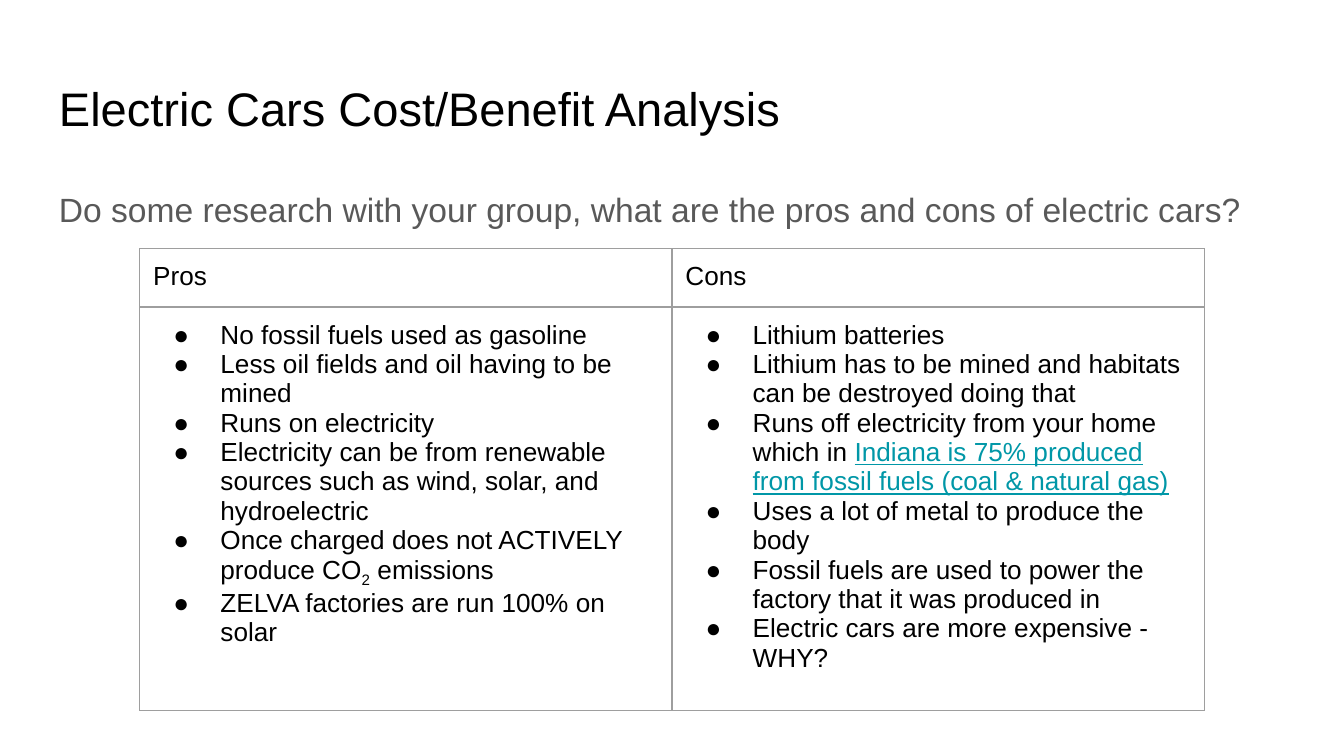
from dataclasses import dataclass

from lxml.etree import SubElement
from pptx import Presentation
from pptx.dml.color import RGBColor
from pptx.enum.text import MSO_ANCHOR
from pptx.oxml.ns import qn
from pptx.util import Inches, Pt

FONT = "Arial"
BLACK = "000000"
GRAY = "595959"
TEAL = "0097A7"
BORDER = "9E9E9E"
WHITE = "FFFFFF"
MARGIN = Inches(0.1)


@dataclass(frozen=True)
class TextRun:
    text: str
    size: float = 14
    color: str = BLACK
    underline: bool = False
    subscript: bool = False


HEADINGS = ["Pros", "Cons"]
PROS = [
    [TextRun("No fossil fuels used as gasoline")],
    [TextRun("Less oil fields and oil having to be mined")],
    [TextRun("Runs on electricity")],
    [TextRun("Electricity can be from renewable sources such as wind, solar, and hydroelectric")],
    [
        TextRun("Once charged does not ACTIVELY produce CO"),
        TextRun("2", subscript=True),
        TextRun(" emissions"),
    ],
    [TextRun("ZELVA factories are run 100% on solar")],
]
CONS = [
    [TextRun("Lithium batteries")],
    [TextRun("Lithium has to be mined and habitats can be destroyed doing that")],
    [
        TextRun("Runs off electricity from your home which in "),
        TextRun(
            "Indiana is 75% produced from fossil fuels (coal & natural gas)",
            color=TEAL,
            underline=True,
        ),
    ],
    [TextRun("Uses a lot of metal to produce the body")],
    [TextRun("Fossil fuels are used to power the factory that it was produced in")],
    [TextRun("Electric cars are more expensive - WHY?")],
]


def rgb(value: str) -> RGBColor:
    return RGBColor.from_string(value)


def add_runs(paragraph, text_runs: list[TextRun]) -> None:
    for text_run in text_runs:
        run = paragraph.add_run()
        run.text = text_run.text
        run.font.name = FONT
        run.font.size = Pt(text_run.size)
        run.font.color.rgb = rgb(text_run.color)
        if text_run.underline:
            run.font.underline = True
        if text_run.subscript:
            run._r.get_or_add_rPr().set("baseline", "-25000")


def set_bullet(paragraph) -> None:
    properties = paragraph._p.get_or_add_pPr()
    properties.set("marL", str(Inches(0.5)))
    properties.set("indent", str(Inches(-0.35)))
    color = SubElement(properties, qn("a:buClr"))
    SubElement(color, qn("a:srgbClr"), val=BLACK)
    SubElement(properties, qn("a:buFont"), typeface=FONT)
    SubElement(properties, qn("a:buChar"), char="●")


def set_margins(holder) -> None:
    """Give a text frame or table cell the same margin on all sides."""
    holder.margin_left = holder.margin_right = MARGIN
    holder.margin_top = holder.margin_bottom = MARGIN


def add_text(slide, top: float, height: float, text_run: TextRun, spacing: float) -> None:
    box = slide.shapes.add_textbox(Inches(0.34), Inches(top), Inches(9.32), Inches(height))
    frame = box.text_frame
    frame.word_wrap = True
    set_margins(frame)
    paragraph = frame.paragraphs[0]
    paragraph.line_spacing = spacing
    add_runs(paragraph, [text_run])


def style_cell(cell) -> None:
    set_margins(cell)
    cell.vertical_anchor = MSO_ANCHOR.TOP
    properties = cell._tc.get_or_add_tcPr()
    for side in ("lnL", "lnR", "lnT", "lnB"):
        line = SubElement(properties, qn(f"a:{side}"), w=str(Pt(0.75)))
        fill = SubElement(line, qn("a:solidFill"))
        SubElement(fill, qn("a:srgbClr"), val=BORDER)
    cell.fill.background()


def add_comparison_table(slide) -> None:
    """Add the table; the second row grows to fit its bullets."""
    frame_size = Inches(3.28)
    table_frame = slide.shapes.add_table(
        2, len(HEADINGS), Inches(1.04), Inches(1.85), frame_size, frame_size
    )
    table = table_frame.table
    table.first_row = table.horz_banding = False
    for row in table.rows:
        row.height = Inches(0.42)
    for column, (heading, points) in enumerate(zip(HEADINGS, [PROS, CONS])):
        table.columns[column].width = Inches(3.96)
        heading_cell, points_cell = table.cell(0, column), table.cell(1, column)
        style_cell(heading_cell)
        style_cell(points_cell)
        add_runs(heading_cell.text_frame.paragraphs[0], [TextRun(heading)])
        text_frame = points_cell.text_frame
        for index, point in enumerate(points):
            paragraph = text_frame.add_paragraph() if index else text_frame.paragraphs[0]
            set_bullet(paragraph)
            add_runs(paragraph, point)
    table_frame.width = table_frame.height = frame_size


def main() -> None:
    presentation = Presentation()
    presentation.slide_width = Inches(10)
    presentation.slide_height = Inches(10 * 9 / 16)
    slide = presentation.slides.add_slide(presentation.slide_layouts[6])
    slide.background.fill.solid()
    slide.background.fill.fore_color.rgb = rgb(WHITE)

    add_text(slide, 0.49, 0.63, TextRun("Electric Cars Cost/Benefit Analysis", 25.2), 1)
    question = "Do some research with your group, what are the pros and cons of electric cars?"
    add_text(slide, 1.26, 3.74, TextRun(question, 18, GRAY), 1.15)
    add_comparison_table(slide)
    presentation.save("out.pptx")


if __name__ == "__main__":
    main()
